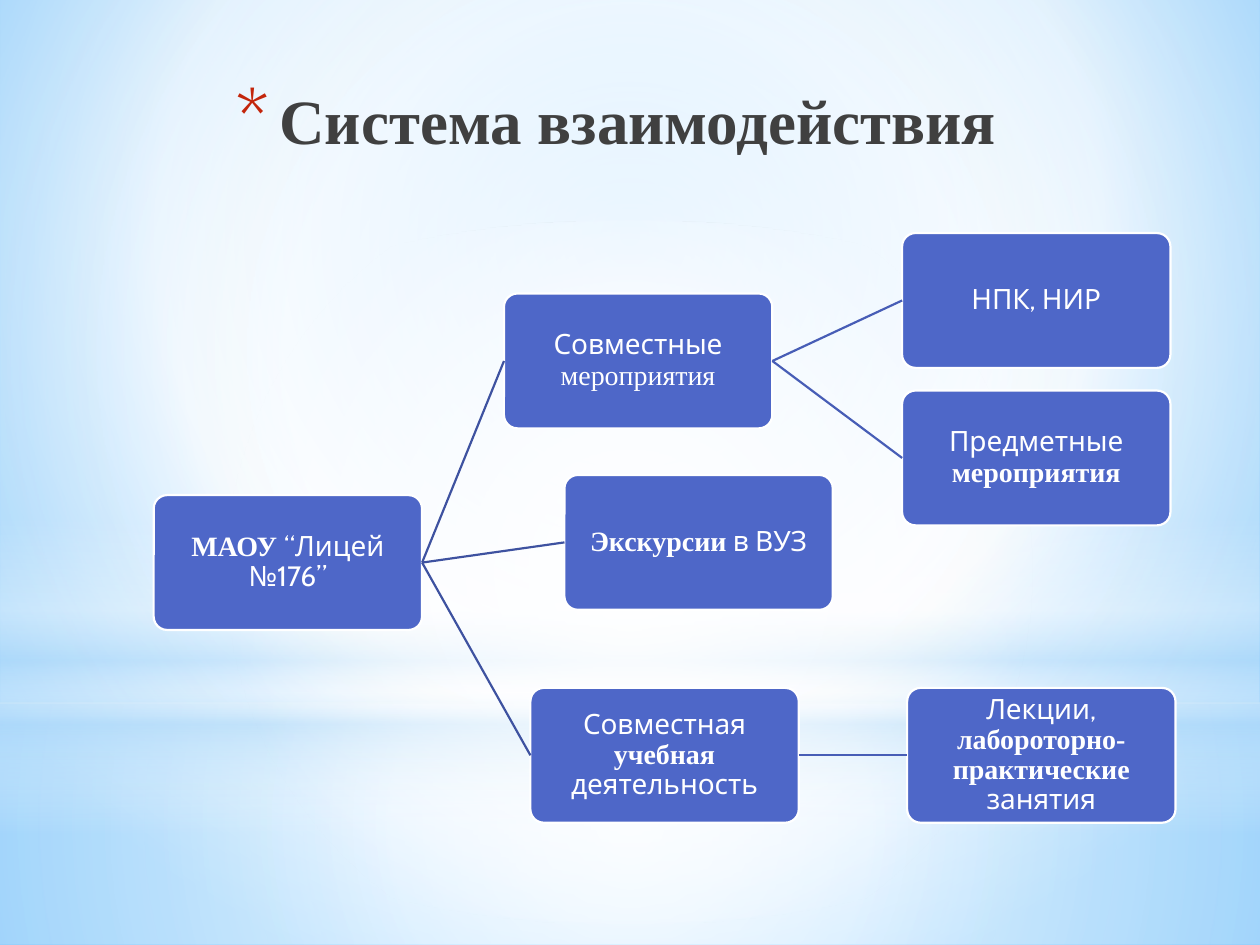
from dataclasses import dataclass

from lxml.etree import SubElement
from pptx import Presentation
from pptx.dml.color import RGBColor
from pptx.enum.shapes import MSO_CONNECTOR, MSO_SHAPE
from pptx.enum.text import MSO_ANCHOR, PP_ALIGN
from pptx.oxml.ns import qn
from pptx.util import Inches, Pt

# The slide is a grid of 100 columns by 75 rows.
COLUMNS, ROWS = 100, 75
CELL = Inches(0.1)
BOX_WIDTH, BOX_HEIGHT = 21.3, 10.7
LEFT_SITE, RIGHT_SITE = 1, 3
CENTER = (50, 50, 50, 50)


@dataclass(frozen=True)
class Theme:
    serif: str = "Times New Roman"
    sans: str = "Cabin"
    title_size: int = 36
    box_size: int = 16
    line_width: float = 1.25
    title: str = "404040"
    bullet: str = "C3260C"
    box: str = "4E67C8"
    white: str = "FFFFFF"
    haze: str = "B4DCFA"
    sky: str = "9ED5FF"
    deep_sky: str = "5BB9FF"
    first_link: str = "3E52A0"
    second_link: str = "475DB6"


THEME = Theme()
SERIF, SERIF_BOLD, SANS = (THEME.serif, False), (THEME.serif, True), (THEME.sans, False)

# name: (column, row, parent, link colour, text runs)
BOXES = {
    "school": (12.2, 39.3, None, None,
               [("МАОУ ", SERIF_BOLD), ("“Лицей №176”", SANS)]),
    "excursions": (44.8, 37.7, "school", THEME.first_link,
                   [("Экскурсии", SERIF_BOLD), (" в ВУЗ", SANS)]),
    "events": (40, 23.3, "school", THEME.first_link,
               [("Совместные ", SANS), ("мероприятия", SERIF)]),
    "research": (71.6, 18.5, "events", THEME.second_link,
                 [("НПК, НИР", SANS)]),
    "subjects": (71.6, 31, "events", THEME.second_link,
                 [("Предметные ", SANS), ("мероприятия", SERIF_BOLD)]),
    "learning": (42.1, 54.6, "school", THEME.first_link,
                 [("Совместная ", SANS), ("учебная", SERIF_BOLD),
                  (" деятельность", SANS)]),
    "lectures": (72, 54.6, "learning", THEME.second_link,
                 [("Лекции, ", SANS), ("лабороторно-практические", SERIF_BOLD),
                  (" занятия", SANS)]),
}


def grid(*cells):
    return [round(cell * CELL) for cell in cells]


def color(value):
    return RGBColor.from_string(value)


def set_gradient(element, stops, focus=None):
    """Swap the first solid fill for a gradient: round about focus, else downward.

    Each stop is (position, colour, opacity), all shares in percent.
    """
    solid = next(element.iter(qn("a:solidFill")))
    gradient = solid.makeelement(qn("a:gradFill"), {"rotWithShape": "1"})
    stop_list = SubElement(gradient, qn("a:gsLst"))
    for position, value, opacity in stops:
        stop = SubElement(stop_list, qn("a:gs"), pos=str(position * 1000))
        stop_color = SubElement(stop, qn("a:srgbClr"), val=value)
        if opacity < 100:
            SubElement(stop_color, qn("a:alpha"), val=str(opacity * 1000))
    if focus:
        path = SubElement(gradient, qn("a:path"), {"path": "circle"})
        sides = {side: str(share * 1000) for side, share in zip("ltrb", focus)}
        SubElement(path, qn("a:fillToRect"), sides)
    else:
        SubElement(gradient, qn("a:lin"), ang="5400000", scaled="0")
    solid.getparent().replace(solid, gradient)


def add_glow(slide, kind, row, height, stops, focus=None):
    """Add a full-width translucent layer of the backdrop."""
    shape = slide.shapes.add_shape(kind, *grid(0, row, COLUMNS, height))
    shape.shadow.inherit = False
    shape.line.fill.background()
    shape.fill.solid()
    set_gradient(shape.element, stops, focus)


def add_backdrop(slide):
    white, haze = THEME.white, THEME.haze
    slide.background.fill.solid()
    set_gradient(slide.element, [(0, THEME.sky, 100), (60, white, 100),
                                 (100, THEME.deep_sky, 100)], (20, 10, 20, 60))
    horizon = 55.8
    add_glow(slide, MSO_SHAPE.RECTANGLE, horizon, ROWS - horizon,
             [(0, white, 91), (37, white, 76), (100, haze, 79)], CENTER)
    add_glow(slide, MSO_SHAPE.RECTANGLE, 0, horizon,
             [(0, white, 89), (48, white, 62), (100, haze, 79)], CENTER)
    add_glow(slide, MSO_SHAPE.RECTANGLE, 41.2, 25,
             [(0, white, 0), (29, white, 30), (45, haze, 40),
              (55, white, 26), (65, haze, 60), (100, white, 0)])
    add_glow(slide, MSO_SHAPE.OVAL, 17.5, 55.8,
             [(0, white, 100), (56, white, 0)], CENTER)


def add_title(slide, text):
    frame = slide.shapes.add_textbox(*grid(17.7, 6, 65.4, 12.5)).text_frame
    frame.word_wrap = True
    paragraph = frame.paragraphs[0]
    paragraph.text = text
    font = paragraph.font
    font.name, font.size, font.bold = THEME.serif, Pt(THEME.title_size), True
    font.color.rgb = color(THEME.title)

    properties = paragraph._p.get_or_add_pPr()
    indent = Inches(0.35)
    properties.set("marL", str(indent))
    properties.set("indent", str(-indent))
    bullet = [("a:buClr", {}), ("a:buSzPct", {"val": "128000"}),
              ("a:buFont", {"typeface": THEME.sans}), ("a:buChar", {"char": "*"})]
    for index, (tag, attributes) in enumerate(bullet):
        item = properties.makeelement(qn(tag), attributes)
        properties.insert(index, item)
        if tag == "a:buClr":
            SubElement(item, qn("a:srgbClr"), val=THEME.bullet)


def add_box(slide, column, row, runs):
    box = slide.shapes.add_shape(MSO_SHAPE.ROUNDED_RECTANGLE,
                                 *grid(column, row, BOX_WIDTH, BOX_HEIGHT))
    box.adjustments[0] = 0.1
    box.shadow.inherit = False
    box.fill.solid()
    box.fill.fore_color.rgb = color(THEME.box)
    box.line.color.rgb = color(THEME.white)
    box.line.width = Pt(THEME.line_width)

    frame = box.text_frame
    frame.word_wrap = True
    frame.vertical_anchor = MSO_ANCHOR.MIDDLE
    frame.margin_left = frame.margin_right = Inches(0.04)
    frame.margin_top = frame.margin_bottom = Inches(0.04)
    paragraph = frame.paragraphs[0]
    paragraph.alignment = PP_ALIGN.CENTER
    paragraph.line_spacing = 0.9
    paragraph.font.size = Pt(THEME.box_size)
    paragraph.font.color.rgb = color(THEME.white)
    for text, (name, bold) in runs:
        run = paragraph.add_run()
        run.text = text
        run.font.name, run.font.bold = name, bold
    return box


def add_link(slide, parent, child, link_color):
    link = slide.shapes.add_connector(MSO_CONNECTOR.STRAIGHT, 0, 0, 0, 0)
    link.begin_connect(parent, RIGHT_SITE)
    link.end_connect(child, LEFT_SITE)
    link.line.color.rgb = color(link_color)
    link.line.width = Pt(THEME.line_width)
    SubElement(link.element.spPr, qn("a:effectLst"))


def main():
    presentation = Presentation()
    presentation.slide_width, presentation.slide_height = grid(COLUMNS, ROWS)
    slide = presentation.slides.add_slide(presentation.slide_layouts[6])
    add_backdrop(slide)
    add_title(slide, "Система взаимодействия")
    shapes = {}
    for name, (column, row, parent, link_color, runs) in BOXES.items():
        shapes[name] = add_box(slide, column, row, runs)
        if parent:
            add_link(slide, shapes[parent], shapes[name], link_color)
    presentation.save("out.pptx")


if __name__ == "__main__":
    main()
